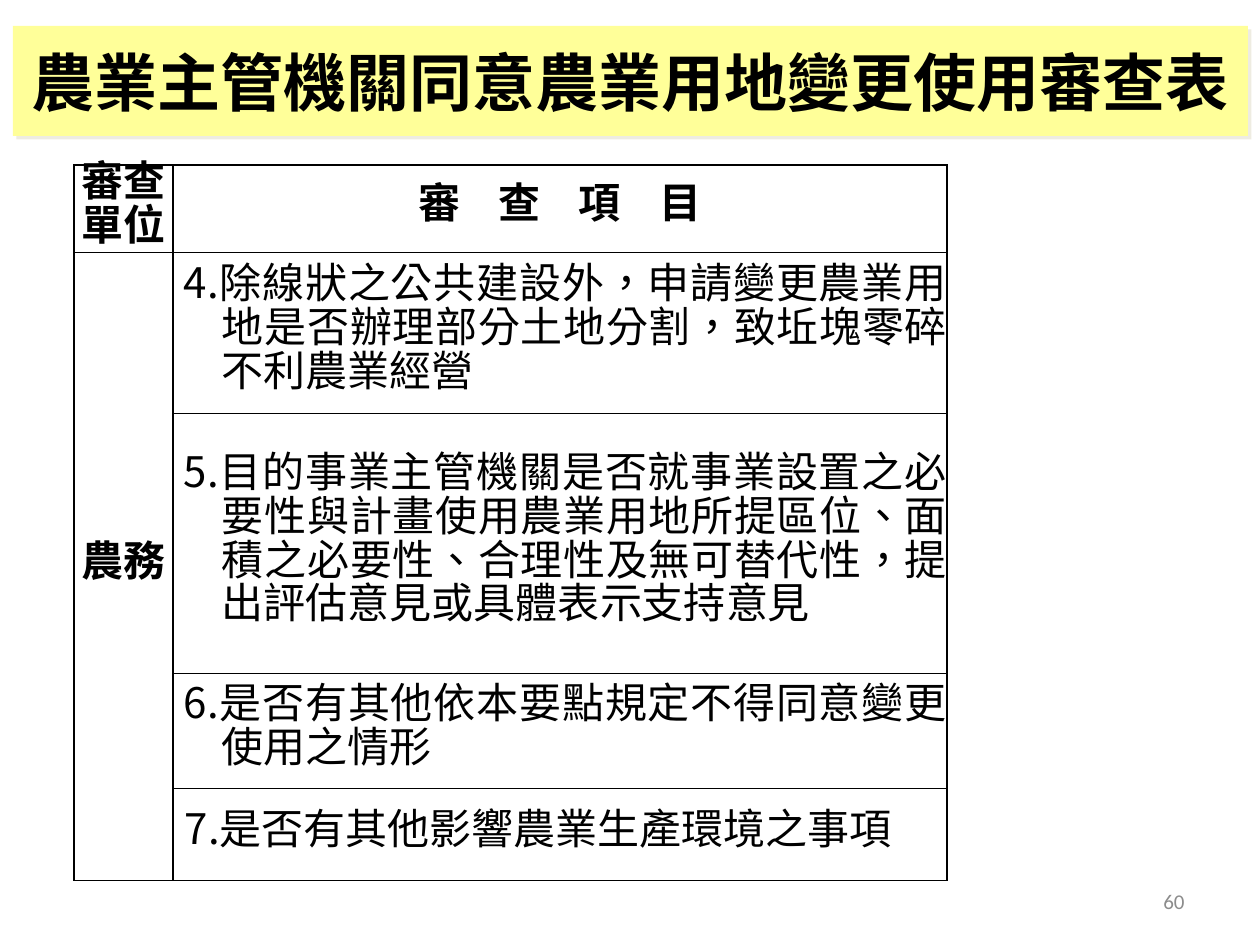
from dataclasses import dataclass

from lxml.etree import SubElement
from pptx import Presentation
from pptx.dml.color import RGBColor
from pptx.enum.shapes import MSO_SHAPE
from pptx.enum.text import MSO_ANCHOR, PP_ALIGN
from pptx.oxml.ns import qn
from pptx.util import Emu, Pt

PX = 914400 // 126
BLACK = RGBColor(0x00, 0x00, 0x00)
GRAY = RGBColor(0x8C, 0x8C, 0x8C)
YELLOW = RGBColor(0xFF, 0xFF, 0x99)
SHADOW = RGBColor(0xEE, 0xEC, 0xE1)
TABLE_FONT = "Noto Sans CJK SC"
COLUMN_WIDTHS = (99, 774)
ROW_HEIGHTS = (86, 161, 260, 115, 92)
TAB_STOP = 494


@dataclass(frozen=True)
class ReviewItem:
    text: str
    margin: int = 49
    hanging: int = 38
    tabbed: bool = True


ITEMS = (
    ReviewItem("4.除線狀之公共建設外，申請變更農業用地是否辦理部分土地分割，致坵塊零碎不利農業經營"),
    ReviewItem(
        "5.目的事業主管機關是否就事業設置之必要性與計畫使用農業用地所提區位、面積之必要性、"
        "合理性及無可替代性，提出評估意見或具體表示支持意見",
        tabbed=False,
    ),
    ReviewItem("6.是否有其他依本要點規定不得同意變更使用之情形"),
    ReviewItem("7.是否有其他影響農業生產環境之事項", margin=62, hanging=50),
)


def px(length: int) -> Emu:
    return Emu(length * PX)


def add_span(para, text: str, *, size: int, font: str, color=BLACK, bold=False, spacing=0.0):
    span = para.add_run()
    span.text = text
    span.font.size = Pt(size)
    span.font.name = font
    span.font.bold = bold
    span.font.color.rgb = color
    properties = span.font._element
    properties.set("lang", "zh-TW")
    if spacing:
        properties.set("spc", str(round(spacing * 100)))
    if font == TABLE_FONT:
        SubElement(properties, qn("a:ea"), typeface=font)


def set_text(frame, text: str, *, align=PP_ALIGN.CENTER, **span_format):
    frame.word_wrap = True
    frame.vertical_anchor = MSO_ANCHOR.MIDDLE
    para = frame.paragraphs[0]
    para.alignment = align
    add_span(para, text, **span_format)


def add_title(page):
    box = page.shapes.add_shape(MSO_SHAPE.RECTANGLE, px(13), px(26), px(1235), px(110))
    box.fill.solid()
    box.fill.fore_color.rgb = YELLOW
    box.line.fill.background()
    box.shadow.inherit = False
    effects = box._element.spPr.find(qn("a:effectLst"))
    shadow = SubElement(effects, qn("a:outerShdw"), dist=str(Pt(2.8)),
                        dir=str(45 * 60000), algn="ctr", rotWithShape="0")
    SubElement(shadow, qn("a:srgbClr"), val=str(SHADOW))
    set_text(box.text_frame, "農業主管機關同意農業用地變更使用審查表",
             size=36, font="Times New Roman", bold=True)


def add_page_number(page):
    box = page.shapes.add_textbox(px(903), px(876), px(294), px(50))
    set_text(box.text_frame, "60", align=PP_ALIGN.RIGHT, size=12, font="Calibri", color=GRAY)


def style_cell(cell):
    cell.margin_left = cell.margin_right = cell.margin_top = cell.margin_bottom = 0
    properties = cell._tc.get_or_add_tcPr()
    for side in ("lnL", "lnR", "lnT", "lnB"):
        line = SubElement(properties, qn(f"a:{side}"), w=str(Pt(1)))
        fill = SubElement(line, qn("a:solidFill"))
        SubElement(fill, qn("a:srgbClr"), val=str(BLACK))
    cell.fill.background()


def fill_cell(cell, text: str, *, bold=True, align=PP_ALIGN.CENTER, margin=0, hanging=0,
              tabs=(TAB_STOP,), spacing=0.0):
    cell.vertical_anchor = MSO_ANCHOR.MIDDLE
    para = cell.text_frame.paragraphs[0]
    para.alignment = align
    para.line_spacing = Pt(25)
    properties = para._p.get_or_add_pPr()
    if margin:
        properties.set("marL", str(px(margin)))
        properties.set("indent", str(px(-hanging)))
    tab_list = SubElement(properties, qn("a:tabLst"))
    for position in tabs:
        SubElement(tab_list, qn("a:tab"), pos=str(px(position)), algn="l")
    if spacing:
        add_span(para, text[:-1], size=24, font=TABLE_FONT, bold=bold, spacing=spacing)
        text = text[-1]
    add_span(para, text, size=24, font=TABLE_FONT, bold=bold)


def add_review_table(page):
    frame = page.shapes.add_table(len(ROW_HEIGHTS), len(COLUMN_WIDTHS), px(74), px(165),
                                  px(sum(COLUMN_WIDTHS)), px(sum(ROW_HEIGHTS)))
    table = frame.table
    table.first_row = table.horz_banding = False
    for column, width in zip(table.columns, COLUMN_WIDTHS):
        column.width = px(width)
    for row, height in zip(table.rows, ROW_HEIGHTS):
        row.height = px(height)
    for cell in table.iter_cells():
        style_cell(cell)
    table.cell(1, 0).merge(table.cell(len(ITEMS), 0))
    fill_cell(table.cell(0, 0), "審查單位")
    fill_cell(table.cell(0, 1), "審 查 項 目", spacing=8.2)
    fill_cell(table.cell(1, 0), "農務")
    for row, item in enumerate(ITEMS, start=1):
        tabs = (item.margin, TAB_STOP) if item.tabbed else (TAB_STOP,)
        fill_cell(table.cell(row, 1), item.text, bold=False, align=PP_ALIGN.JUSTIFY,
                  margin=item.margin, hanging=item.hanging, tabs=tabs)


def main():
    deck = Presentation()
    deck.slide_width, deck.slide_height = px(1260), px(945)
    page = deck.slides.add_slide(deck.slide_layouts[6])
    add_page_number(page)
    add_title(page)
    add_review_table(page)
    deck.save("out.pptx")


if __name__ == "__main__":
    main()
